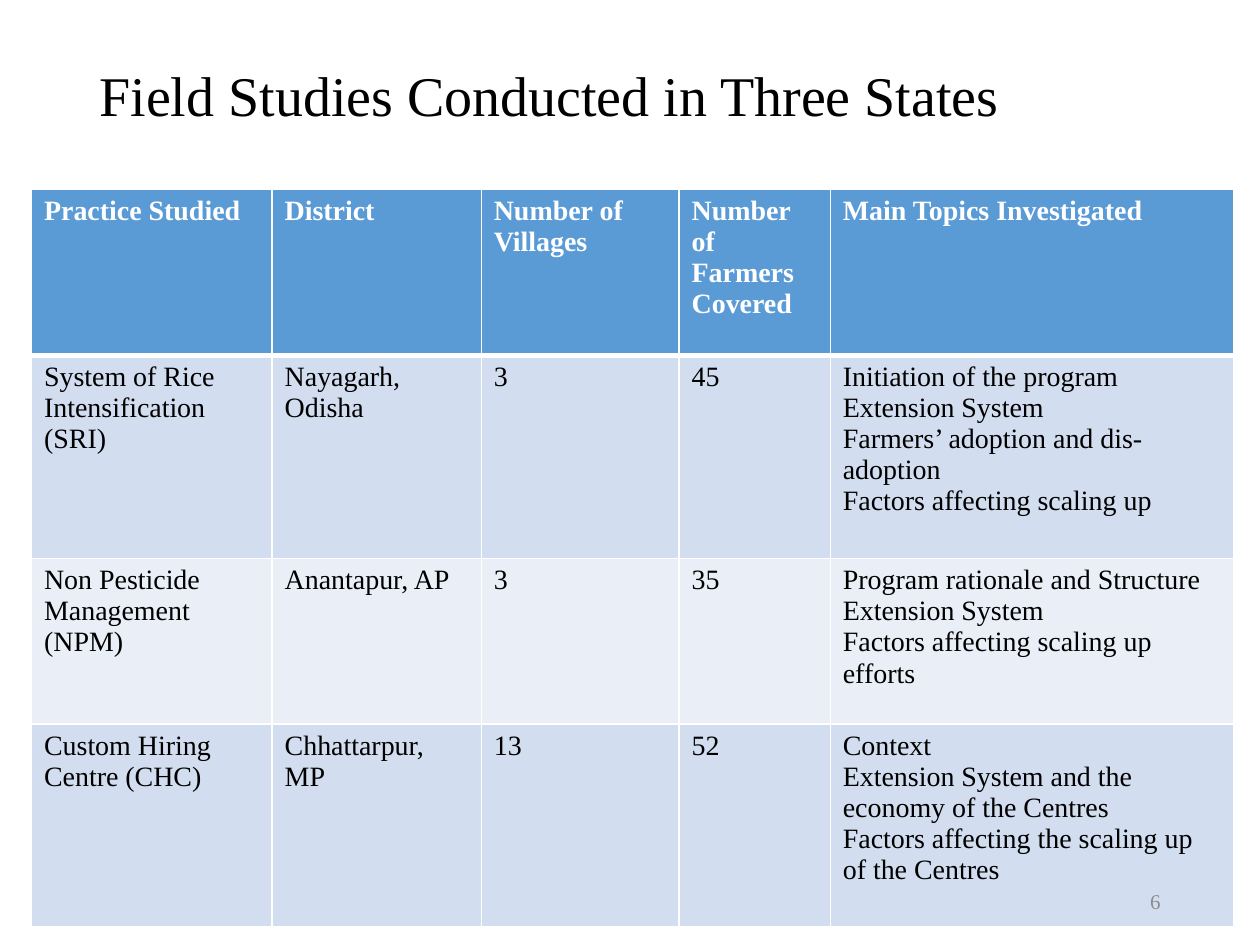
from dataclasses import dataclass
from typing import NamedTuple

from lxml import etree
from pptx import Presentation
from pptx import util as u
from pptx.dml import color
from pptx.enum import text
from pptx.oxml import ns

WIDE, HIGH = 10, 7.5


@dataclass(frozen=True)
class Theme:
    font: str = "Times New Roman"
    ink: str = "000000"
    white: str = "FFFFFF"
    gray: str = "8C8C8C"
    head: str = "5B9BD5"
    bands: tuple = ("D2DEEF", "EAEFF7")
    title: int = 32
    body: int = 16
    small: int = 12
    thin: int = 1
    thick: int = 3


class Box(NamedTuple):
    left: float
    top: float
    width: float
    height: float

    def place(self) -> tuple:
        return tuple(u.Inches(share * side) for share, side in zip(self, (WIDE, HIGH) * 2))


class Study(NamedTuple):
    practice: str
    district: str
    villages: str
    farmers: str
    topics: str


class Label(NamedTuple):
    words: str
    box: Box
    size: int
    tint: str
    format: dict


THEME = Theme()
GRID = Box(0.025, 0.2, 0.954, 0.78)
COLS = (0.191, 0.166, 0.157, 0.12, 0.32)
ROWS = (0.176, 0.215, 0.175, 0.215)

STUDIES = (
    Study("Practice Studied", "District", "Number of Villages",
          "Number of Farmers Covered", "Main Topics Investigated"),
    Study("System of Rice Intensification (SRI)", "Nayagarh, Odisha", "3", "45",
          "Initiation of the program\nExtension System\n"
          "Farmers’ adoption and dis-adoption\nFactors affecting scaling up"),
    Study("Non Pesticide Management (NPM)", "Anantapur, AP", "3", "35",
          "Program rationale and Structure\nExtension System\n"
          "Factors affecting scaling up efforts"),
    Study("Custom Hiring Centre (CHC)", "Chhattarpur, MP", "13", "52",
          "Context\nExtension System and the economy of the Centres\n"
          "Factors affecting the scaling up of the Centres"),
)

TITLE = Label("Field Studies Conducted in Three States", Box(0.069, 0.023, 0.862, 0.163),
              THEME.title, THEME.ink, {"line_spacing": 0.9})
NUMBER = Label("6", Box(0.706, 0.927, 0.225, 0.053),
               THEME.small, THEME.gray, {"alignment": text.PP_ALIGN.RIGHT})


def apply(item, values: dict) -> None:
    for name, value in values.items():
        setattr(item, name, value)


def write(frame, words: str, size: int, tint: str, bold: bool = False, format: dict = {}) -> None:
    frame.text = words
    for para in frame.paragraphs:
        apply(para, format)
        for run in para.runs:
            apply(run.font, {"name": THEME.font, "size": u.Pt(size), "bold": bold})
            run.font.color.rgb = color.RGBColor.from_string(tint)


def label(slide, item: Label) -> None:
    frame = slide.shapes.add_textbox(*item.box.place()).text_frame
    apply(frame, {"word_wrap": True, "vertical_anchor": text.MSO_ANCHOR.MIDDLE})
    write(frame, item.words, item.size, item.tint, format=item.format)


def border(cell, sides: dict) -> None:
    props = cell._tc.get_or_add_tcPr()
    for side, width in sides.items():
        line = etree.SubElement(props, ns.qn(f"a:ln{side}"), w=str(u.Pt(width)))
        fill = etree.SubElement(line, ns.qn("a:solidFill"))
        etree.SubElement(fill, ns.qn("a:srgbClr"), val=THEME.white)


def table(slide, box: Box, studies: tuple) -> None:
    grid = slide.shapes.add_table(len(ROWS), len(COLS), *box.place()).table
    for col, share in zip(grid.columns, COLS):
        col.width = u.Inches(share * WIDE)
    for row, share in zip(grid.rows, ROWS):
        row.height = u.Inches(share * HIGH)
    for r, study in enumerate(studies):
        head = r == 0
        back = THEME.head if head else THEME.bands[(r - 1) % 2]
        sides = {"L": THEME.thin, "R": THEME.thin,
                 "T": THEME.thick if r == 1 else THEME.thin,
                 "B": THEME.thick if head else THEME.thin}
        for c, words in enumerate(study):
            cell = grid.cell(r, c)
            border(cell, sides)
            cell.fill.solid()
            cell.fill.fore_color.rgb = color.RGBColor.from_string(back)
            write(cell.text_frame, words, THEME.body, THEME.white if head else THEME.ink, head)


def main() -> None:
    deck = Presentation()
    apply(deck, {"slide_width": u.Inches(WIDE), "slide_height": u.Inches(HIGH)})
    slide = deck.slides.add_slide(deck.slide_layouts[6])
    label(slide, TITLE)
    table(slide, GRID, STUDIES)
    label(slide, NUMBER)
    deck.save("out.pptx")


if __name__ == "__main__":
    main()
